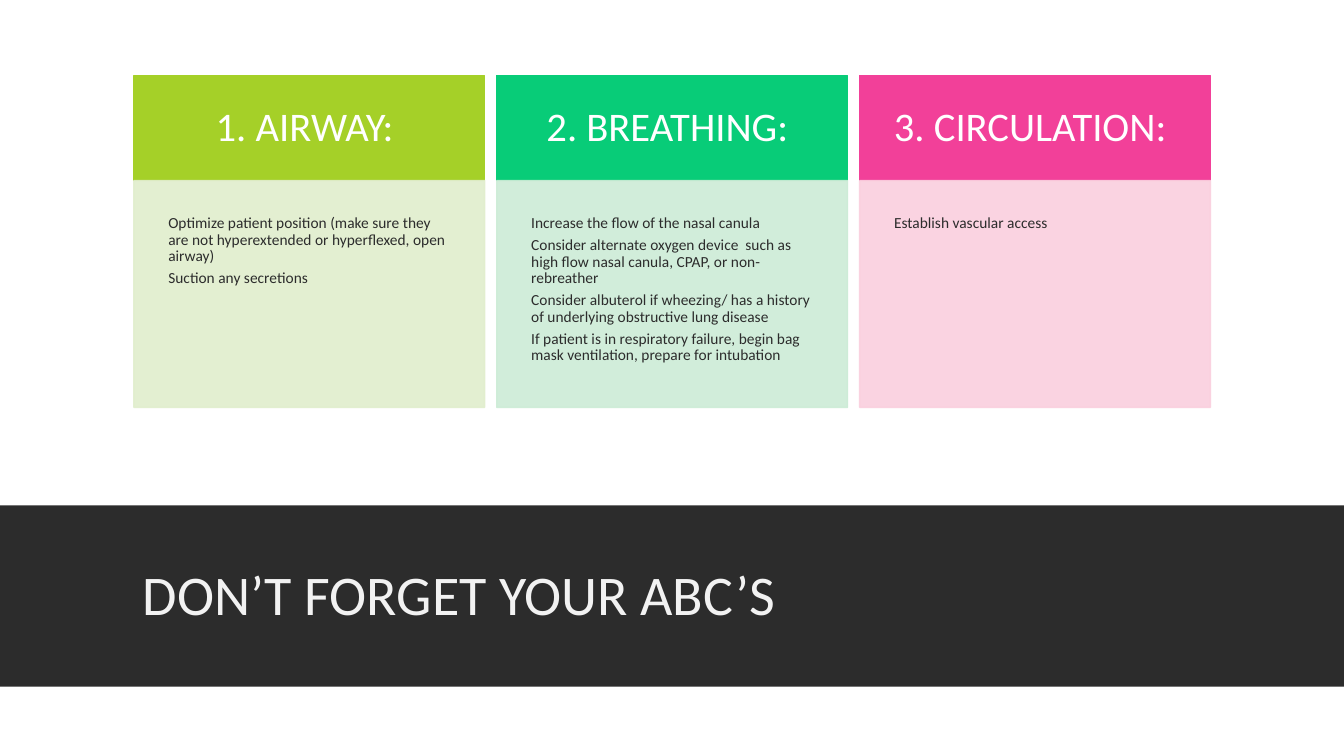
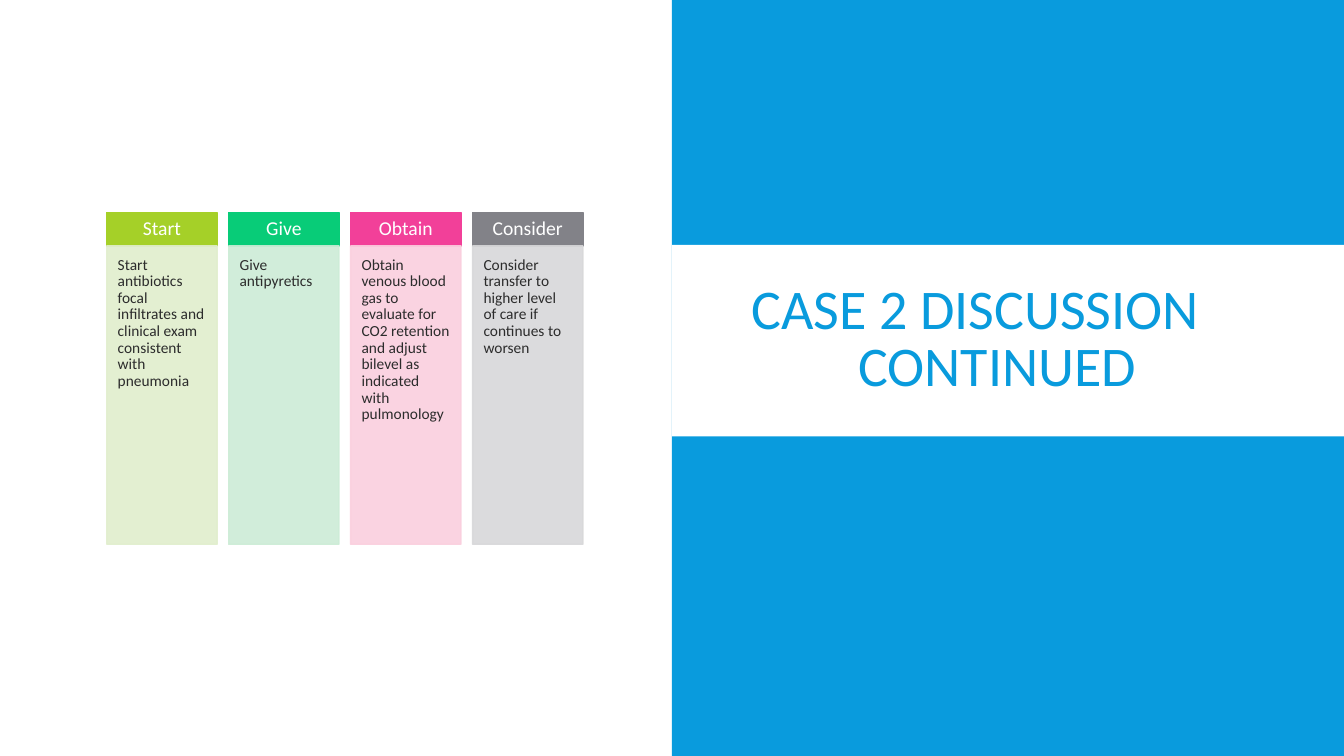
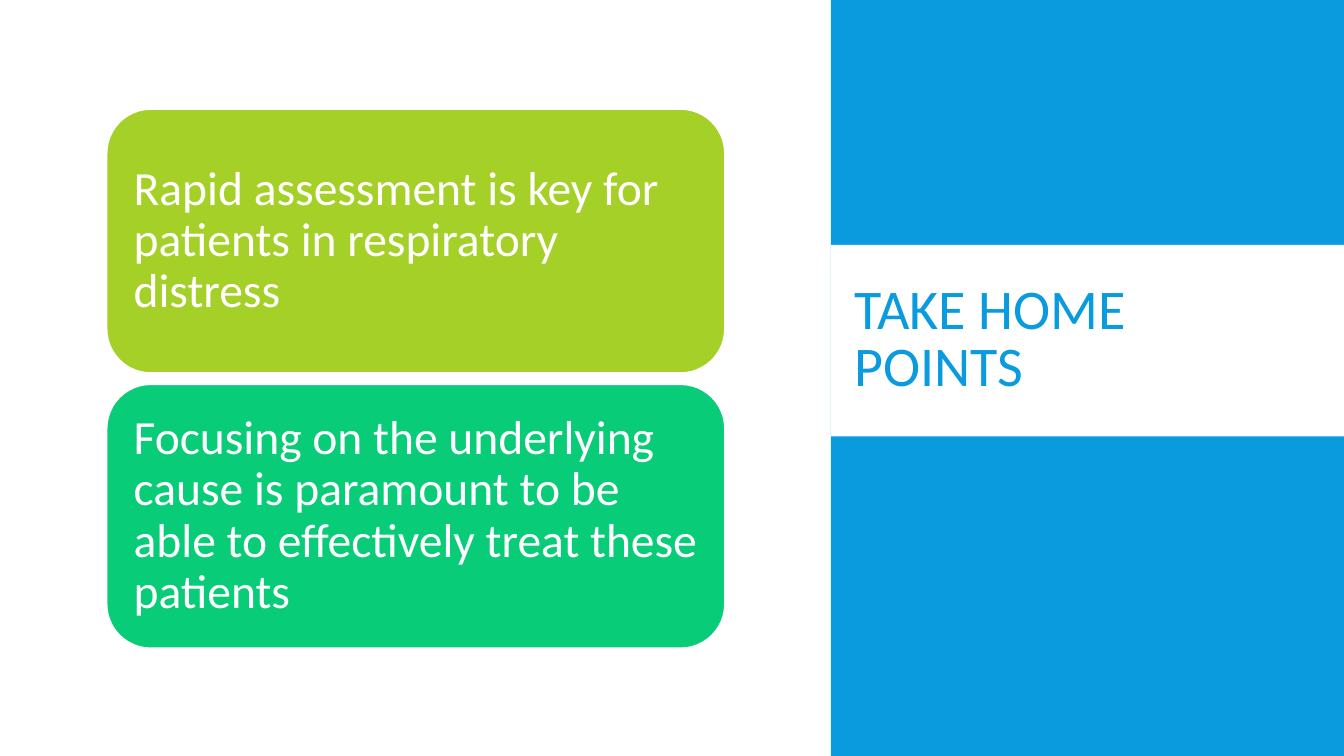
from dataclasses import dataclass

from lxml.etree import SubElement
from pptx import Presentation
from pptx.dml.color import RGBColor
from pptx.enum.shapes import MSO_SHAPE
from pptx.enum.text import MSO_ANCHOR, PP_ALIGN
from pptx.oxml.ns import qn
from pptx.util import Pt


@dataclass(frozen=True)
class Theme:
    font: str = "Calibri"
    white: str = "FFFFFF"
    dark: str = "2C2C2C"
    off_white: str = "F2F2F2"
    blue: str = "099BDD"
    accents: tuple = ("A5D028", "08CC78", "F24099", "828288")
    tints: tuple = ("E1EECD", "CCECD6", "FACFDE", "D8D8DA")
    tint_opacity: int = 90
    title_size: float = 40
    statement_size: float = 34
    body_size: float = 11


THEME = Theme()
SLIDE_WIDTH, SLIDE_HEIGHT = 960, 540


@dataclass(frozen=True)
class Box:
    left: float
    top: float
    width: float
    height: float


@dataclass(frozen=True)
class Column:
    heading: str
    points: tuple


@dataclass(frozen=True)
class ColumnGrid:
    """Where a row of columns starts, how it repeats and how its text sits."""
    left: float
    top: float
    width: float
    pitch: float
    heading_height: float
    body_height: float
    heading_size: float
    heading_inset: float
    body_inset: float


def write_text(shape, paragraphs, *, size, color, align=PP_ALIGN.LEFT,
               anchor=MSO_ANCHOR.MIDDLE, line_spacing=0.9, space_after=0.35,
               insets=(7.2, 3.6)) -> None:
    """Fill a shape with paragraphs; space_after is a share of the type size."""
    frame = shape.text_frame
    frame.word_wrap = True
    frame.vertical_anchor = anchor
    frame.margin_left = frame.margin_right = Pt(insets[0])
    frame.margin_top = frame.margin_bottom = Pt(insets[1])
    for index, text in enumerate(paragraphs):
        paragraph = frame.add_paragraph() if index else frame.paragraphs[0]
        paragraph.alignment = align
        paragraph.line_spacing = line_spacing
        paragraph.space_after = Pt(space_after * size)
        run = paragraph.add_run()
        run.text = text
        run.font.name = THEME.font
        run.font.size = Pt(size)
        run.font.color.rgb = RGBColor.from_string(color)


def add_block(slide, box: Box, fill: str, *, line=None, opacity=100,
              kind=MSO_SHAPE.RECTANGLE):
    shape = slide.shapes.add_shape(
        kind, Pt(box.left), Pt(box.top), Pt(box.width), Pt(box.height))
    shape.shadow.inherit = False
    shape.fill.solid()
    shape.fill.fore_color.rgb = RGBColor.from_string(fill)
    if line:
        shape.line.width = Pt(1)
        shape.line.color.rgb = RGBColor.from_string(line)
    else:
        shape.line.fill.background()
    if opacity < 100:
        for color in shape.element.spPr.iter(qn("a:srgbClr")):
            SubElement(color, qn("a:alpha"), val=str(opacity * 1000))
    return shape


def add_title(slide, box: Box, text: str, color: str, align=PP_ALIGN.LEFT):
    title = slide.shapes.add_textbox(
        Pt(box.left), Pt(box.top), Pt(box.width), Pt(box.height))
    write_text(title, [text], size=THEME.title_size, color=color, align=align,
               line_spacing=0.85, space_after=0)
    return title


def set_tab_stop(shape, position: float) -> None:
    for properties in shape.element.iter(qn("a:pPr")):
        stops = SubElement(properties, qn("a:tabLst"))
        SubElement(stops, qn("a:tab"), pos=str(Pt(position)), algn="l")


def add_side_panel(slide, left: float) -> None:
    """Blue panel from left to the slide's right edge, with a white title band."""
    width = SLIDE_WIDTH - left
    add_block(slide, Box(left, 0, width, SLIDE_HEIGHT), THEME.blue)
    add_block(slide, Box(left, 175, width, 136.8), THEME.white)


def add_columns(slide, grid: ColumnGrid, columns: list[Column]) -> None:
    for index, (column, accent, tint) in enumerate(
            zip(columns, THEME.accents, THEME.tints)):
        left = grid.left + index * grid.pitch
        heading = add_block(
            slide, Box(left, grid.top, grid.width, grid.heading_height),
            accent, line=accent)
        write_text(heading, [column.heading], size=grid.heading_size,
                   color=THEME.white, align=PP_ALIGN.CENTER,
                   insets=(grid.heading_inset, grid.heading_inset))
        body = add_block(
            slide, Box(left, grid.top + grid.heading_height, grid.width, grid.body_height),
            tint, line=tint, opacity=THEME.tint_opacity)
        write_text(body, column.points, size=THEME.body_size, color=THEME.dark,
                   anchor=MSO_ANCHOR.TOP, insets=(grid.body_inset, grid.body_inset))


def build_abc_slide(slide) -> None:
    add_block(slide, Box(0, 361, SLIDE_WIDTH, 129.6), THEME.dark)
    add_title(slide, Box(95, 368, 770, 118.8), "DON’T FORGET YOUR ABC’S", THEME.off_white)
    grid = ColumnGrid(left=95.6, top=54, width=250.6, pitch=259.2, heading_height=75,
                      body_height=162, heading_size=29, heading_inset=20.3,
                      body_inset=24.6)
    add_columns(slide, grid, [
        Column("1. AIRWAY: ", (
            "Optimize patient position (make sure they are not hyperextended "
            "or hyperflexed, open airway)",
            "Suction any secretions")),
        Column("2. BREATHING: ", (
            "Increase the flow of the nasal canula",
            "Consider alternate oxygen device  such as high flow nasal canula, "
            "CPAP, or non-rebreather",
            "Consider albuterol if wheezing/ has a history of underlying "
            "obstructive lung disease",
            "If patient is in respiratory failure, begin bag mask ventilation, "
            "prepare for intubation")),
        Column("3. CIRCULATION: ", ("Establish vascular access",)),
    ])


def build_discussion_slide(slide) -> None:
    add_side_panel(slide, 480)
    title = add_title(slide, Box(508.3, 184.3, 416.9, 118.8),
                      "CASE 2 DISCUSSION\tCONTINUED ", THEME.blue, PP_ALIGN.CENTER)
    set_tab_stop(title, 360)
    grid = ColumnGrid(left=76.3, top=152, width=78.8, pitch=87.1, heading_height=23.6,
                      body_height=213.2, heading_size=14, heading_inset=6.5,
                      body_inset=7.8)
    add_columns(slide, grid, [
        Column("Start", ("Start antibiotics focal infiltrates and clinical exam "
                         "consistent with pneumonia",)),
        Column("Give", ("Give antipyretics",)),
        Column("Obtain", ("Obtain venous blood gas to evaluate for CO2 retention and "
                          "adjust bilevel as indicated with pulmonology",)),
        Column("Consider", ("Consider transfer to higher level of care if continues "
                            "to worsen",)),
    ])


def build_take_home_slide(slide) -> None:
    add_side_panel(slide, 593.6)
    add_title(slide, Box(603.4, 184.3, 325.4, 118.8), "TAKE HOME POINTS", THEME.blue)
    statements = (
        "Rapid assessment is key for patients in respiratory distress",
        "Focusing on the underlying cause is paramount to be able to effectively "
        "treat these patients",
    )
    for index, (statement, accent) in enumerate(zip(statements, THEME.accents)):
        card = add_block(slide, Box(76.3, 78 + index * 196.6, 441.4, 188.4), accent,
                         line=THEME.white, kind=MSO_SHAPE.ROUNDED_RECTANGLE)
        write_text(card, [statement], size=THEME.statement_size, color=THEME.white,
                   insets=(10, 10))


def main() -> None:
    presentation = Presentation()
    presentation.slide_width = Pt(SLIDE_WIDTH)
    presentation.slide_height = Pt(SLIDE_HEIGHT)
    blank_layout = presentation.slide_layouts[6]
    for build in (build_abc_slide, build_discussion_slide, build_take_home_slide):
        build(presentation.slides.add_slide(blank_layout))
    presentation.save("out.pptx")


if __name__ == "__main__":
    main()
